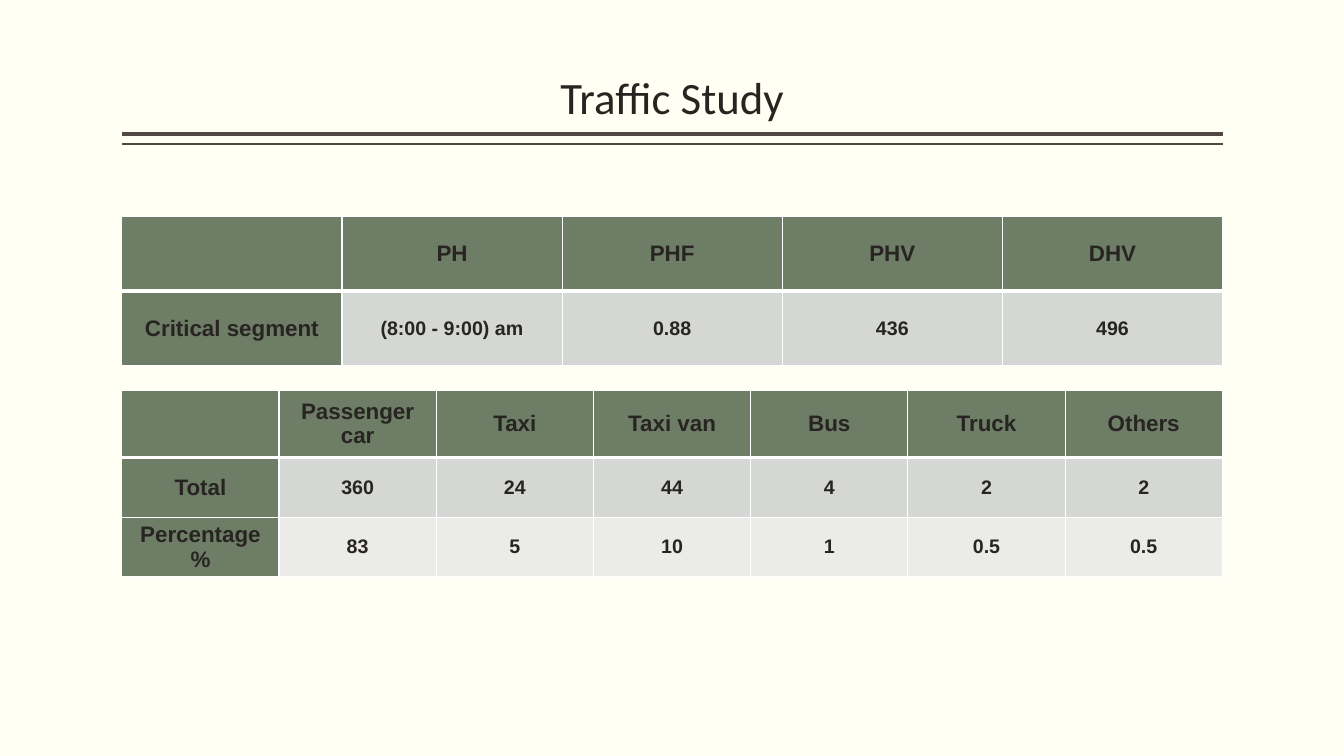
from lxml import etree
from pptx import Presentation, util as u
from pptx.dml.color import RGBColor
from pptx.enum import shapes, text
from pptx.oxml.ns import qn

INK, RULE, GREEN, WHITE = "282422", "514843", "6D7D66", "FFFFFF"
BANDS = ["D4D7D3", "EBECEA"]
LEFT, WIDTH = 3.07, 27.74


def color(value):
    return RGBColor.from_string(value)


def add_run(p, content, size, font, bold=False):
    r = p.add_run()
    r.text = content
    r.font.size = u.Pt(size)
    r.font.name = font
    r.font.bold = bold
    r.font.color.rgb = color(INK)


def add_title(s, x, y, w, h, content):
    tf = s.shapes.add_textbox(u.Cm(x), u.Cm(y), u.Cm(w), u.Cm(h)).text_frame
    tf.word_wrap = True
    tf.vertical_anchor = text.MSO_ANCHOR.BOTTOM
    tf.margin_left = tf.margin_right = 0
    p = tf.paragraphs[0]
    p.alignment = text.PP_ALIGN.CENTER
    p.line_spacing = 0.9
    add_run(p, content, 32, "Calibri")


def add_rules(s, x, y, w):
    for offset, weight in ((0, 3), (0.25, 1)):
        line = s.shapes.add_connector(
            shapes.MSO_CONNECTOR.STRAIGHT,
            u.Cm(x + w), u.Cm(y + offset), u.Cm(x), u.Cm(y + offset))
        line.line.color.rgb = color(RULE)
        line.line.width = u.Pt(weight)
        etree.SubElement(line._element.spPr, qn("a:effectLst"))


def set_borders(cell, bottom):
    tcPr = cell._tc.get_or_add_tcPr()
    for i, (side, weight) in enumerate(
            (("L", 1), ("R", 1), ("T", 1), ("B", bottom))):
        ln = etree.Element(qn(f"a:ln{side}"), w=str(u.Pt(weight)))
        fill = etree.SubElement(ln, qn("a:solidFill"))
        etree.SubElement(fill, qn("a:srgbClr"), val=WHITE)
        tcPr.insert(i, ln)


def add_data_table(s, x, y, w, heights, rows):
    columns = len(rows[0])
    table = s.shapes.add_table(
        len(rows), columns, u.Cm(x), u.Cm(y), u.Cm(w), u.Cm(sum(heights))).table
    for column in table.columns:
        column.width = u.Cm(w / columns)
    for i, (height, values) in enumerate(zip(heights, rows)):
        table.rows[i].height = u.Cm(height)
        for j, value in enumerate(values):
            cell = table.cell(i, j)
            heading = i == 0 or j == 0
            cell.fill.solid()
            cell.fill.fore_color.rgb = color(GREEN if heading else BANDS[i - 1])
            set_borders(cell, 3 if i == 0 else 1)
            cell.margin_left = cell.margin_right = u.Cm(0.18)
            cell.margin_top = cell.margin_bottom = 0
            cell.vertical_anchor = text.MSO_ANCHOR.MIDDLE
            p = cell.text_frame.paragraphs[0]
            p.alignment = text.PP_ALIGN.CENTER
            if value:
                add_run(p, value, 16 if heading else 14, "Arial", True)


def main():
    prs = Presentation()
    prs.slide_width, prs.slide_height = u.Cm(33.87), u.Cm(19.05)
    s = prs.slides.add_slide(prs.slide_layouts[6])
    s.background.fill.solid()
    s.background.fill.fore_color.rgb = color("FFFFF3")
    add_rules(s, LEFT, 3.38, WIDTH)
    add_title(s, LEFT, 0.2, WIDTH, 3.05, "Traffic Study")
    add_data_table(s, LEFT, 9.83, WIDTH, [1.7, 1.5, 1.5], [
        ["", "Passenger car", "Taxi", "Taxi van", "Bus", "Truck", "Others"],
        ["Total", "360", "24", "44", "4", "2", "2"],
        ["Percentage %", "83", "5", "10", "1", "0.5", "0.5"],
    ])
    add_data_table(s, LEFT, 5.46, WIDTH, [1.88, 1.88], [
        ["", "PH", "PHF", "PHV", "DHV"],
        ["Critical segment", "(8:00 - 9:00) am", "0.88", "436", "496"],
    ])
    prs.save("out.pptx")


if __name__ == "__main__":
    main()
